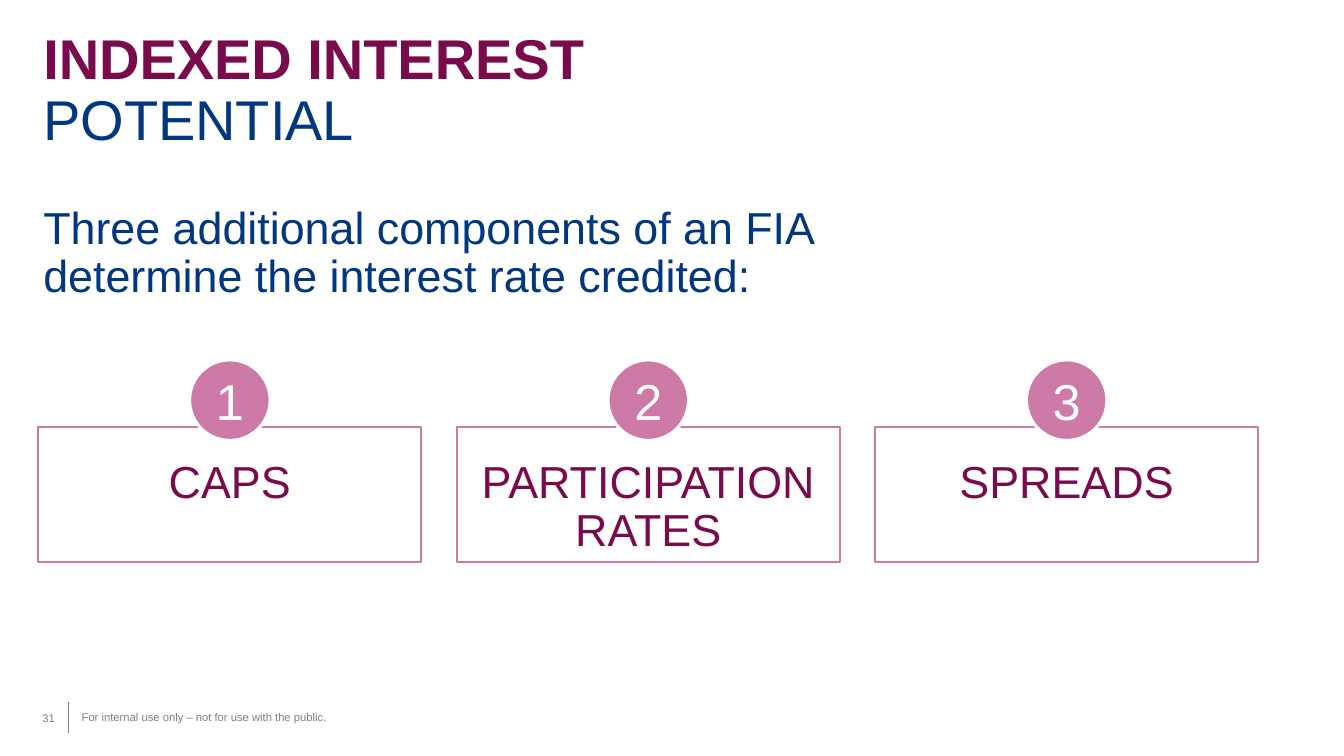
from dataclasses import dataclass

from lxml import etree
from pptx import Presentation
from pptx import util as u
from pptx.dml.color import RGBColor
from pptx.enum import shapes, text
from pptx.oxml.ns import qn

PX = 9144  # EMU per px, 100 px to the inch


@dataclass(frozen=True)
class Theme:
    font: str = "Arial"
    plum: str = "790B4D"
    navy: str = "003781"
    pink: str = "CD7BA6"
    white: str = "FFFFFF"
    grey: str = "7F7F7F"
    title: int = 40
    number: int = 36
    body: int = 32
    footer: int = 8


@dataclass(frozen=True)
class Box:
    left: int
    top: int
    width: int
    height: int

    def emu(self) -> tuple[int, ...]:
        return tuple(v * PX for v in (self.left, self.top, self.width, self.height))


@dataclass(frozen=True)
class Run:
    words: str
    size: int
    color: str
    bold: bool = False


@dataclass(frozen=True)
class Component:
    number: str
    label: str
    label_height: int


T = Theme()
COMPONENTS = (
    Component("1", "CAPS", 59),
    Component("2", "PARTICIPATION RATES", 107),
    Component("3", "SPREADS", 59),
)
CARD_LEFT, CARD_TOP, CARD_W, CARD_H, CARD_STEP = 38, 424, 380, 134, 415
BADGE_TOP, BADGE_SIZE, LABEL_TOP = 357, 80, 451


def rgb(color: str) -> RGBColor:
    return RGBColor.from_string(color)


def write(s, runs: tuple[Run, ...], insets: tuple[int, int, int, int] = (0, 0, 0, 0),
          anchor=text.MSO_ANCHOR.TOP, align=text.PP_ALIGN.LEFT, spacing: float = 1.0) -> None:
    """Fill a shape with one paragraph, each run on its own line."""
    tf = s.text_frame
    tf.word_wrap = True
    tf.vertical_anchor = anchor
    tf.margin_left, tf.margin_top, tf.margin_right, tf.margin_bottom = (v * PX for v in insets)
    p = tf.paragraphs[0]
    p.alignment = align
    p.line_spacing = spacing
    for i, run in enumerate(runs):
        if i:
            p.add_line_break()
        r = p.add_run()
        r.text = run.words
        r.font.name = T.font
        r.font.size = u.Pt(run.size)
        r.font.bold = run.bold
        r.font.color.rgb = rgb(run.color)


def add_text(slide, box: Box, *runs: Run, **layout) -> None:
    write(slide.shapes.add_textbox(*box.emu()), runs, **layout)


def add_outlined(slide, kind, box: Box, line: str, weight: float, fill: str | None = None):
    s = slide.shapes.add_shape(kind, *box.emu())
    s.shadow.inherit = False
    s.line.color.rgb = rgb(line)
    s.line.width = u.Pt(weight)
    if fill:
        s.fill.solid()
        s.fill.fore_color.rgb = rgb(fill)
    else:
        s.fill.background()
    return s


def add_component(slide, left: int, component: Component) -> None:
    """Draw a frame with a numbered badge on its top edge and a label inside."""
    centered = dict(insets=(10, 5, 10, 5), align=text.PP_ALIGN.CENTER)
    add_outlined(slide, shapes.MSO_SHAPE.RECTANGLE,
                 Box(left, CARD_TOP, CARD_W, CARD_H), T.pink, 1.5)
    badge_left = left + (CARD_W - BADGE_SIZE) // 2
    badge = add_outlined(slide, shapes.MSO_SHAPE.OVAL,
                         Box(badge_left, BADGE_TOP, BADGE_SIZE, BADGE_SIZE),
                         T.white, 2.25, T.pink)
    write(badge, (Run(component.number, T.number, T.white),),
          anchor=text.MSO_ANCHOR.MIDDLE, **centered)
    add_text(slide, Box(left, LABEL_TOP, CARD_W, component.label_height),
             Run(component.label, T.body, T.plum), spacing=0.9, **centered)


def add_footer(slide) -> None:
    add_text(slide, Box(81, 699, 1191, 26),
             Run("For internal use only – not for use with the public.", T.footer, T.grey),
             insets=(0, 6, 12, 6))
    divider = slide.shapes.add_connector(
        shapes.MSO_CONNECTOR.STRAIGHT, 68 * PX, 696 * PX, 68 * PX, 727 * PX)
    divider.line.color.rgb = rgb(T.grey)
    divider.line.width = u.Pt(0.75)
    etree.SubElement(divider.line._get_or_add_ln().getparent(), qn("a:effectLst"))
    add_text(slide, Box(42, 692, 40, 40), Run("31", T.footer, T.grey),
             insets=(0, 6, 0, 6), anchor=text.MSO_ANCHOR.MIDDLE)


def main() -> None:
    prs = Presentation()
    prs.slide_width, prs.slide_height = 1333 * PX, 750 * PX
    slide = prs.slides.add_slide(prs.slide_layouts[6])
    add_footer(slide)
    add_text(slide, Box(43, 204, 844, 97),
             Run("Three additional components of an FIA determine the interest rate credited:",
                 T.body, T.navy), spacing=0.9)
    for i, component in enumerate(COMPONENTS):
        add_component(slide, CARD_LEFT + i * CARD_STEP, component)
    add_text(slide, Box(43, 30, 624, 121),
             Run("INDEXED INTEREST", T.title, T.plum, bold=True),
             Run("POTENTIAL", T.title, T.navy),
             anchor=text.MSO_ANCHOR.BOTTOM, spacing=0.9)
    prs.save("out.pptx")


if __name__ == "__main__":
    main()
